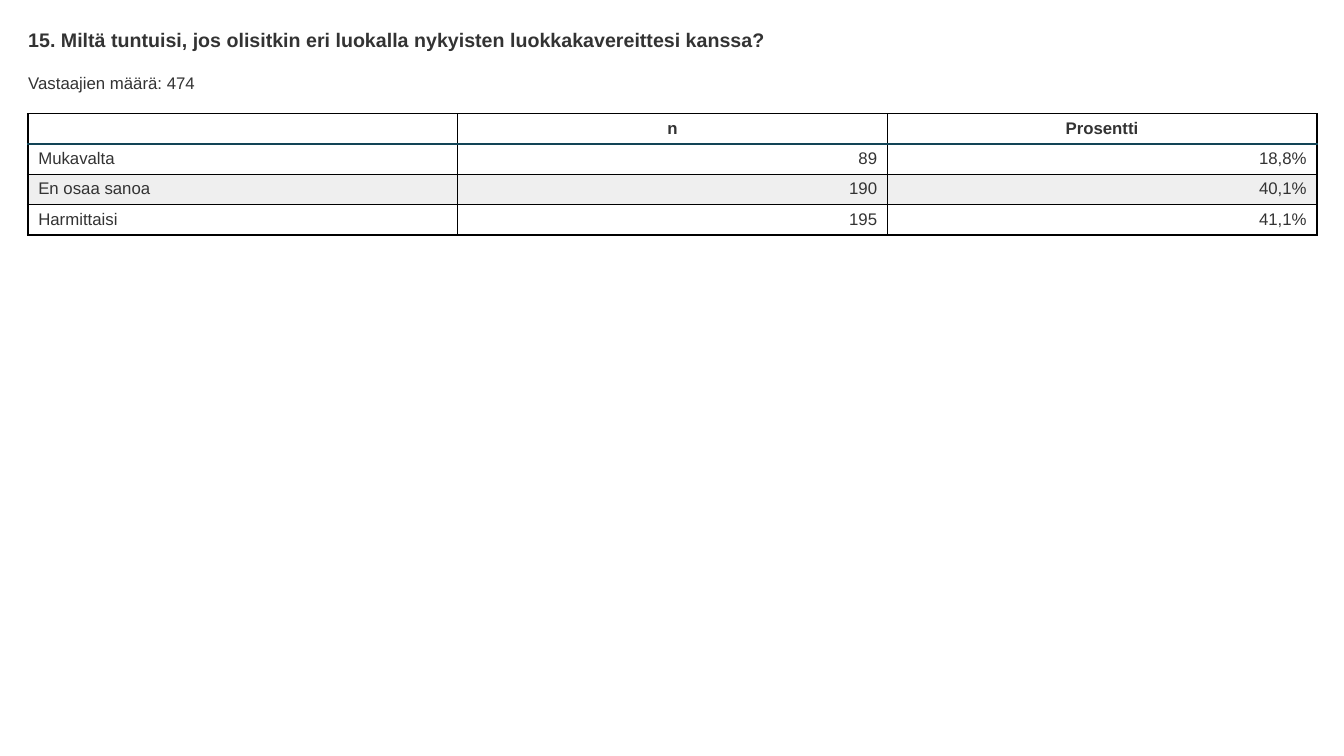
from dataclasses import dataclass

from lxml.etree import SubElement
from pptx import Presentation
from pptx.dml.color import RGBColor
from pptx.enum.text import MSO_ANCHOR, PP_ALIGN
from pptx.oxml.ns import qn
from pptx.util import Inches, Pt

TITLE = "15. Miltä tuntuisi, jos olisitkin eri luokalla nykyisten luokkakavereittesi kanssa?"
RESPONDENTS = "Vastaajien määrä: 474"
ANSWERS = [
    ("", "n", "Prosentti"),
    ("Mukavalta", "89", "18,8%"),
    ("En osaa sanoa", "190", "40,1%"),
    ("Harmittaisi", "195", "41,1%"),
]


@dataclass(frozen=True)
class Theme:
    font: str = "Arial"
    ink: str = "333333"
    paper: str = "FFFFFF"
    band: str = "EFEFEF"
    grid: str = "000000"
    header_rule: str = "124456"
    title_size: int = 14
    body_size: int = 12
    thin: int = 1
    thick: int = 2


THEME = Theme()
SLIDE_W, SLIDE_H = 13.33, 7.5
MARGIN = 0.28
CONTENT_W = 12.78
TITLE_H, COUNT_H = 0.23, 0.2
COUNT_TOP, TABLE_TOP = 0.72, 1.13
ROW_H = 0.3


def write(tf, text, size=THEME.body_size, bold=False, align=PP_ALIGN.LEFT):
    p = tf.paragraphs[0]
    p.alignment = align
    if not text:
        SubElement(p._p, qn("a:endParaRPr"), sz=str(size * 100))
        return
    r = p.add_run()
    r.text = text
    r.font.name = THEME.font
    r.font.size = Pt(size)
    r.font.bold = bold
    r.font.color.rgb = RGBColor.from_string(THEME.ink)


def place(s, top, height):
    s.left, s.top = Inches(MARGIN), Inches(top)
    s.width, s.height = Inches(CONTENT_W), Inches(height)
    tf = s.text_frame
    tf.word_wrap = True
    tf.vertical_anchor = MSO_ANCHOR.TOP
    tf.margin_left = tf.margin_right = tf.margin_top = tf.margin_bottom = 0
    return tf


def add_border(cell, side, color, width):
    ln = SubElement(cell._tc.get_or_add_tcPr(), qn(f"a:ln{side}"), w=str(Pt(width)))
    SubElement(SubElement(ln, qn("a:solidFill")), qn("a:srgbClr"), val=color)


def format_cell(cell, row, col, last_col):
    left = THEME.thick if col == 0 else THEME.thin
    right = THEME.thick if col == last_col else THEME.thin
    header_top = (THEME.header_rule, THEME.thick)
    plain = (THEME.grid, THEME.thin)
    add_border(cell, "L", THEME.grid, left)
    add_border(cell, "R", THEME.grid, right)
    add_border(cell, "T", *(header_top if row == 1 else plain))
    add_border(cell, "B", *(header_top if row == 0 else plain))
    cell.fill.solid()
    banded = row > 0 and row % 2 == 0
    cell.fill.fore_color.rgb = RGBColor.from_string(THEME.band if banded else THEME.paper)


def add_answers(slide):
    n_rows, n_cols = len(ANSWERS), len(ANSWERS[0])
    table = slide.shapes.add_table(
        n_rows, n_cols, Inches(MARGIN), Inches(TABLE_TOP),
        Inches(CONTENT_W), Inches(ROW_H * n_rows),
    ).table
    table.first_row = table.horz_banding = False
    for row, values in enumerate(ANSWERS):
        for col, value in enumerate(values):
            cell = table.cell(row, col)
            format_cell(cell, row, col, n_cols - 1)
            body_align = PP_ALIGN.RIGHT if col else PP_ALIGN.LEFT
            align = PP_ALIGN.CENTER if row == 0 else body_align
            write(cell.text_frame, value, bold=row == 0, align=align)


def main():
    prs = Presentation()
    prs.slide_width, prs.slide_height = Inches(SLIDE_W), Inches(SLIDE_H)
    slide = prs.slides.add_slide(prs.slide_layouts[5])
    write(place(slide.shapes.title, MARGIN, TITLE_H), TITLE, size=THEME.title_size, bold=True)
    count = slide.shapes.add_textbox(0, 0, 0, 0)
    write(place(count, COUNT_TOP, COUNT_H), RESPONDENTS)
    add_answers(slide)
    prs.save("out.pptx")


if __name__ == "__main__":
    main()
